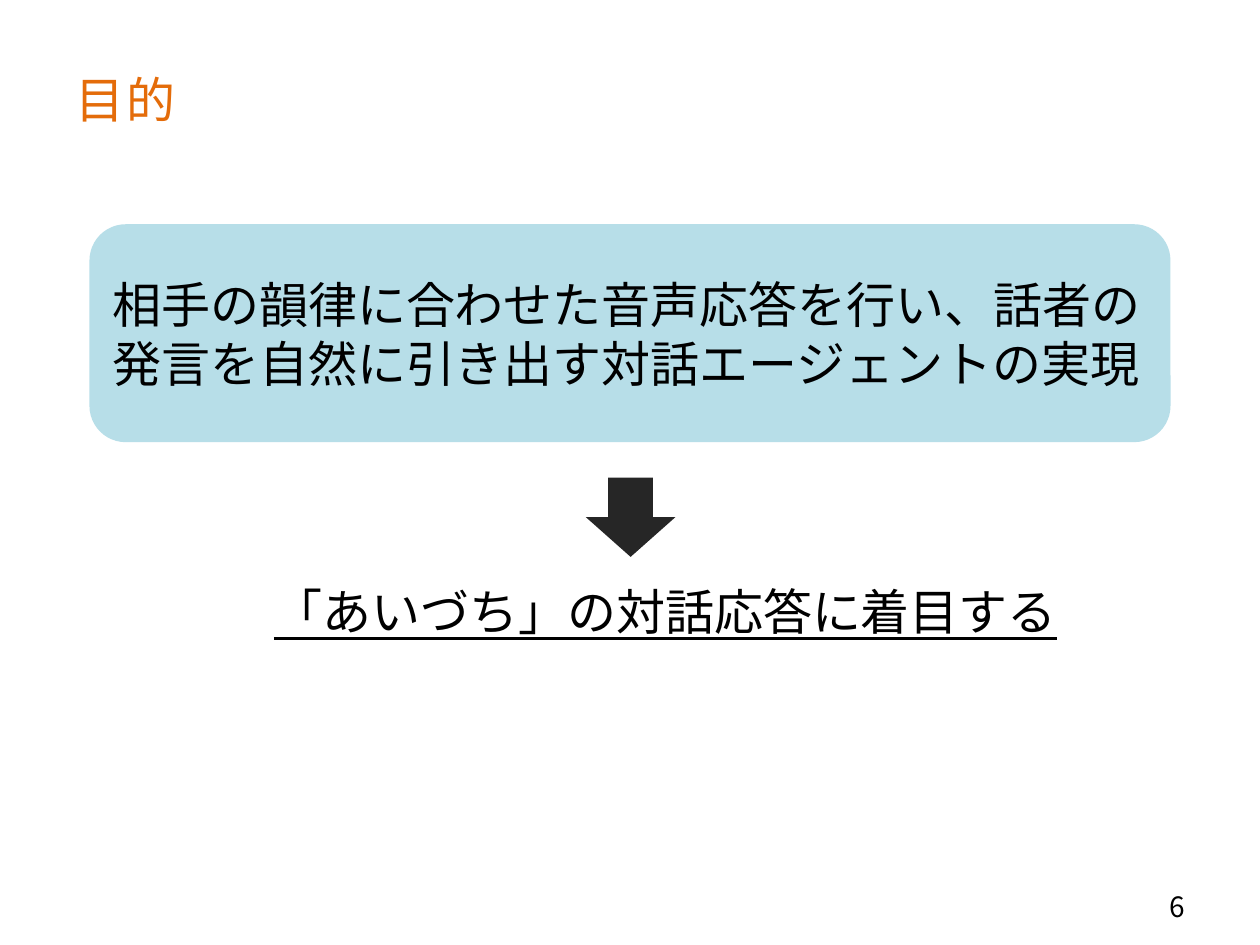
import pptx
import pptx.util
import pptx.dml.color
import pptx.enum.shapes
import pptx.enum.text
import pptx.oxml.ns
import lxml.etree

Inches = pptx.util.Inches
Color = pptx.dml.color.RGBColor
Shape = pptx.enum.shapes.MSO_SHAPE
Align = pptx.enum.text.PP_ALIGN
Anchor = pptx.enum.text.MSO_ANCHOR

ORANGE = Color(0xE4, 0x6C, 0x0A)
BLUE = Color(0xB7, 0xDE, 0xE8)
DARK = Color(0x26, 0x26, 0x26)
BLACK = Color(0, 0, 0)
LATIN = "Calibri"
GOTHIC = "Noto Sans CJK JP"


class Page:
    def __init__(self, deck):
        self.slide = deck.slides.add_slide(deck.slide_layouts[6])
        self.size = 28

    def label(self, item, words, font=LATIN, size=None, color=BLACK,
              align=Align.LEFT, anchor=Anchor.MIDDLE, line=False):
        frame = item.text_frame
        frame.text = words
        frame.word_wrap = True
        frame.vertical_anchor = anchor
        para = frame.paragraphs[0]
        para.alignment = align
        run = para.runs[0]
        run.font.name = font
        run.font.size = pptx.util.Pt(size or self.size)
        run.font.color.rgb = color
        if line:
            run.font.underline = True
        props = run.font._element
        props.set("lang", "ja-JP")
        east = lxml.etree.SubElement(props, pptx.oxml.ns.qn("a:ea"))
        east.set("typeface", GOTHIC)
        return para

    def text(self, words, left, top, width, height, **style):
        box = self.slide.shapes.add_textbox(
            Inches(left), Inches(top), Inches(width), Inches(height))
        return self.label(box, words, **style)

    def shape(self, kind, fill, left, top, width, height):
        item = self.slide.shapes.add_shape(
            kind, Inches(left), Inches(top), Inches(width), Inches(height))
        item.shadow.inherit = False
        item.fill.solid()
        item.fill.fore_color.rgb = fill
        item.line.fill.background()
        return item


def main():
    deck = pptx.Presentation()
    deck.slide_width = Inches(10)
    deck.slide_height = Inches(7.5)
    page = Page(deck)

    title = page.text("目的", 0.5, 0.31, 9, 0.86, font=GOTHIC, color=ORANGE)
    title.line_spacing = 1.2
    title.runs[0].font._element.set("spc", "120")

    page.text("6", 7.17, 7.03, 2.33, 0.32, font=GOTHIC, size=16,
              align=Align.RIGHT)

    goal = page.shape(Shape.ROUNDED_RECTANGLE, BLUE, 0.71, 1.78, 8.58, 1.73)
    page.label(goal, "相手の韻律に合わせた音声応答を行い、話者の発言を自然に引き出す対話エージェントの実現")

    page.shape(Shape.DOWN_ARROW, DARK, 4.65, 3.79, 0.71, 0.63)

    page.text("「あいづち」の対話応答に着目する", 1.46, 4.57, 7.64, 0.57,
              align=Align.CENTER, anchor=Anchor.TOP, line=True)

    deck.save("out.pptx")


if __name__ == "__main__":
    main()
